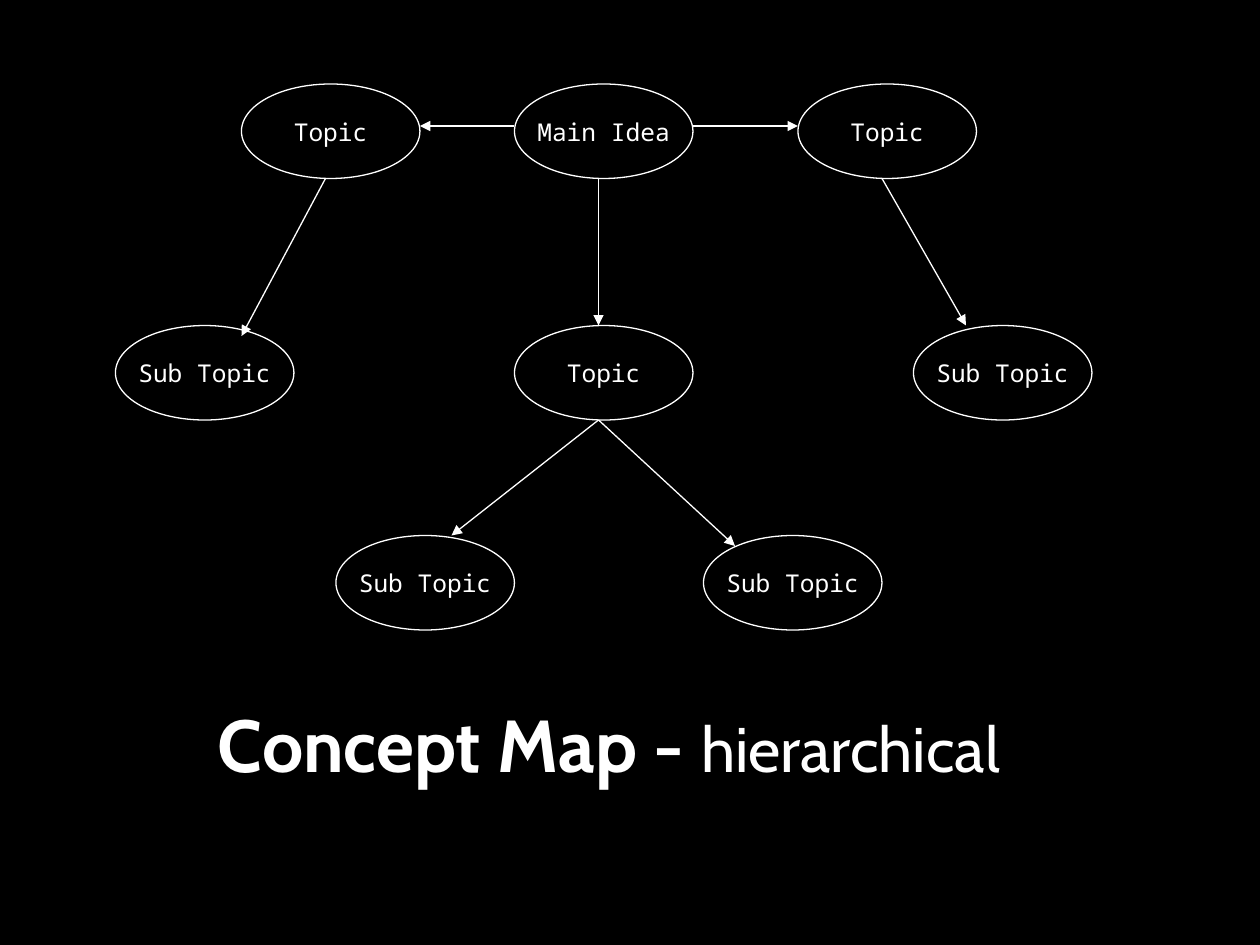
from pptx import Presentation
from pptx.dml.color import RGBColor
from pptx.enum.shapes import MSO_CONNECTOR as Connector, MSO_SHAPE as Shape
from pptx.enum.text import MSO_ANCHOR as Anchor, MSO_AUTO_SIZE as AutoSize, PP_ALIGN as Align
from pptx.oxml.ns import qn
from pptx.util import Pt
from lxml.etree import SubElement

PX = 7620
WHITE = "FFFFFF"
BLACK = "000000"
NODE_WIDTH, NODE_HEIGHT = 170, 90
TOP_ROW, MIDDLE_ROW, BOTTOM_ROW = 80, 310, 510


def color(value):
    return RGBColor.from_string(value)


def style_span(span, font, size, bold):
    span.font.name = font
    span.font.size = Pt(size)
    span.font.bold = bold
    span.font.color.rgb = color(WHITE)


deck = Presentation()
deck.slide_width = 1200 * PX
deck.slide_height = 900 * PX
page = deck.slides.add_slide(deck.slide_layouts[5])
page.background.fill.solid()
page.background.fill.fore_color.rgb = color(BLACK)

nodes = [
    ("Topic", 230, TOP_ROW),
    ("Main Idea", 490, TOP_ROW),
    ("Topic", 760, TOP_ROW),
    ("Sub Topic", 110, MIDDLE_ROW),
    ("Topic", 490, MIDDLE_ROW),
    ("Sub Topic", 870, MIDDLE_ROW),
    ("Sub Topic", 320, BOTTOM_ROW),
    ("Sub Topic", 670, BOTTOM_ROW),
]
for label, left, top in nodes:
    node = page.shapes.add_shape(
        Shape.OVAL, left * PX, top * PX, NODE_WIDTH * PX, NODE_HEIGHT * PX
    )
    node.shadow.inherit = False
    node.fill.background()
    node.line.color.rgb = color(WHITE)
    node.line.width = Pt(0.75)
    frame = node.text_frame
    frame.word_wrap = False
    frame.vertical_anchor = Anchor.MIDDLE
    frame.text = label
    para = frame.paragraphs[0]
    para.alignment = Align.CENTER
    style_span(para.runs[0], "Noto Sans Mono", 14, False)

arrows = [
    (490, 120, 400, 120),
    (660, 120, 760, 120),
    (310, 170, 230, 320),
    (570, 170, 570, 310),
    (840, 170, 920, 310),
    (570, 400, 430, 510),
    (570, 400, 700, 520),
]
for ends in arrows:
    arrow = page.shapes.add_connector(Connector.STRAIGHT, *[end * PX for end in ends])
    arrow.line.color.rgb = color(WHITE)
    arrow.line.width = Pt(0.75)
    SubElement(arrow.line._get_or_add_ln(), qn("a:tailEnd"), type="triangle")
    SubElement(arrow._element.spPr, qn("a:effectLst"))

title = page.shapes.title
title.left, title.top, title.width, title.height = 150 * PX, 660 * PX, 860 * PX, 96 * PX
frame = title.text_frame
frame.word_wrap = True
frame.auto_size = AutoSize.NONE
frame.vertical_anchor = Anchor.TOP
para = frame.paragraphs[0]
para.alignment = Align.CENTER
for text, size, bold in [("Concept Map - ", 42, True), ("hierarchical", 36, False)]:
    span = para.add_run()
    span.text = text
    style_span(span, "Cabin", size, bold)

deck.save("out.pptx")
